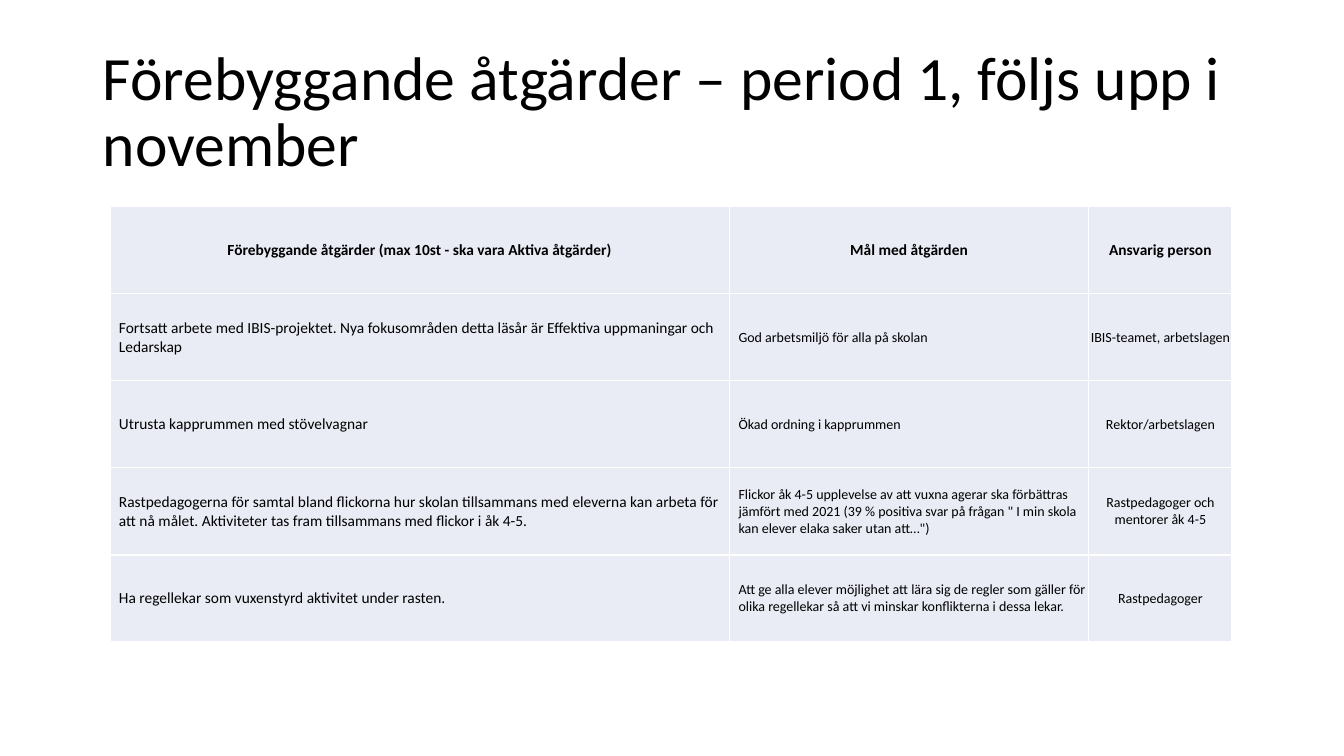
from lxml.etree import SubElement
from pptx import Presentation
from pptx.dml.color import RGBColor
from pptx.enum.text import MSO_ANCHOR, MSO_AUTO_SIZE, PP_ALIGN
from pptx.oxml.ns import qn
from pptx.util import Inches, Pt

FONT = "Calibri"
TEXT, CELL, BORDER = "000000", "E9EBF5", "FFFFFF"
COLUMN_WIDTHS = [6.14, 3.56, 1.42]
BODY_SIZES = [11, 10, 10]
MEASURES = [
    ("Förebyggande åtgärder (max 10st - ska vara Aktiva åtgärder)",
     "Mål med åtgärden", "Ansvarig person"),
    ("Fortsatt arbete med IBIS-projektet. Nya fokusområden detta läsår är "
     "Effektiva uppmaningar och Ledarskap",
     "God arbetsmiljö för alla på skolan", "IBIS-teamet, arbetslagen"),
    ("Utrusta kapprummen med stövelvagnar",
     "Ökad ordning i kapprummen", "Rektor/arbetslagen"),
    ("Rastpedagogerna för samtal bland flickorna hur skolan tillsammans med "
     "eleverna kan arbeta för att nå målet. Aktiviteter tas fram tillsammans "
     "med flickor i åk 4-5.",
     "Flickor åk 4-5 upplevelse av att vuxna agerar ska förbättras jämfört med "
     "2021 (39 % positiva svar på frågan \" I min skola kan elever elaka saker "
     "utan att…\")",
     "Rastpedagoger och mentorer åk 4-5"),
    ("Ha regellekar som vuxenstyrd aktivitet under rasten.",
     "Att ge alla elever möjlighet att lära sig de regler som gäller för olika "
     "regellekar så att vi minskar konflikterna i dessa lekar.",
     "Rastpedagoger"),
]


def color(hex_code):
    """Return the colour for a hex string."""
    return RGBColor.from_string(hex_code)


def format_text(paragraph, size, align, bold=False):
    """Format the runs and alignment of one paragraph."""
    paragraph.alignment = align
    for run in paragraph.runs:
        run.font.name = FONT
        run.font.size = Pt(size)
        run.font.bold = bold
        run.font.color.rgb = color(TEXT)


def add_borders(cell):
    """Draw a thin line on all four sides of a cell."""
    properties = cell._tc.get_or_add_tcPr()
    for side in ("a:lnL", "a:lnR", "a:lnT", "a:lnB"):
        line = SubElement(properties, qn(side), w=str(Pt(1)))
        SubElement(SubElement(line, qn("a:solidFill")), qn("a:srgbClr"), val=BORDER)


def place_heading(slide, left, top, width, height):
    """Fill the title placeholder within the given box."""
    heading = slide.shapes.title
    heading.left, heading.top = Inches(left), Inches(top)
    heading.width, heading.height = Inches(width), Inches(height)
    frame = heading.text_frame
    frame.text = "Förebyggande åtgärder – period 1, följs upp i november"
    frame.word_wrap = True
    frame.auto_size = MSO_AUTO_SIZE.NONE
    frame.vertical_anchor = MSO_ANCHOR.MIDDLE
    frame.paragraphs[0].line_spacing = 0.9
    format_text(frame.paragraphs[0], 44, PP_ALIGN.LEFT)


def fill_cell(cell, wording, size, centred, bold):
    """Write and style one table cell."""
    cell.text = wording
    cell.vertical_anchor = MSO_ANCHOR.MIDDLE
    cell.margin_left = Inches(0 if centred else 0.09)
    cell.margin_right = cell.margin_top = cell.margin_bottom = 0
    align = PP_ALIGN.CENTER if centred else PP_ALIGN.LEFT
    format_text(cell.text_frame.paragraphs[0], size, align, bold)
    add_borders(cell)
    cell.fill.solid()
    cell.fill.fore_color.rgb = color(CELL)


def place_measures(slide, left, top, width, height):
    """Build the table of measures within the given box."""
    measures = slide.shapes.add_table(
        len(MEASURES), len(COLUMN_WIDTHS),
        Inches(left), Inches(top), Inches(width), Inches(height)).table
    for column, share in zip(measures.columns, COLUMN_WIDTHS):
        column.width = Inches(width * share / sum(COLUMN_WIDTHS))
    for row_index, row in enumerate(MEASURES):
        header = row_index == 0
        for column_index, wording in enumerate(row):
            size = 11 if header else BODY_SIZES[column_index]
            centred = header or column_index == 2
            fill_cell(measures.cell(row_index, column_index),
                      wording, size, centred, header)


def main():
    """Build and save the slide."""
    deck = Presentation()
    deck.slide_width, deck.slide_height = Inches(13.33), Inches(7.5)
    slide = deck.slides.add_slide(deck.slide_layouts[5])
    place_heading(slide, 0.92, 0.4, 11.5, 1.45)
    place_measures(slide, 1.09, 2.05, 11.13, 4.32)
    deck.save("out.pptx")


if __name__ == "__main__":
    main()
